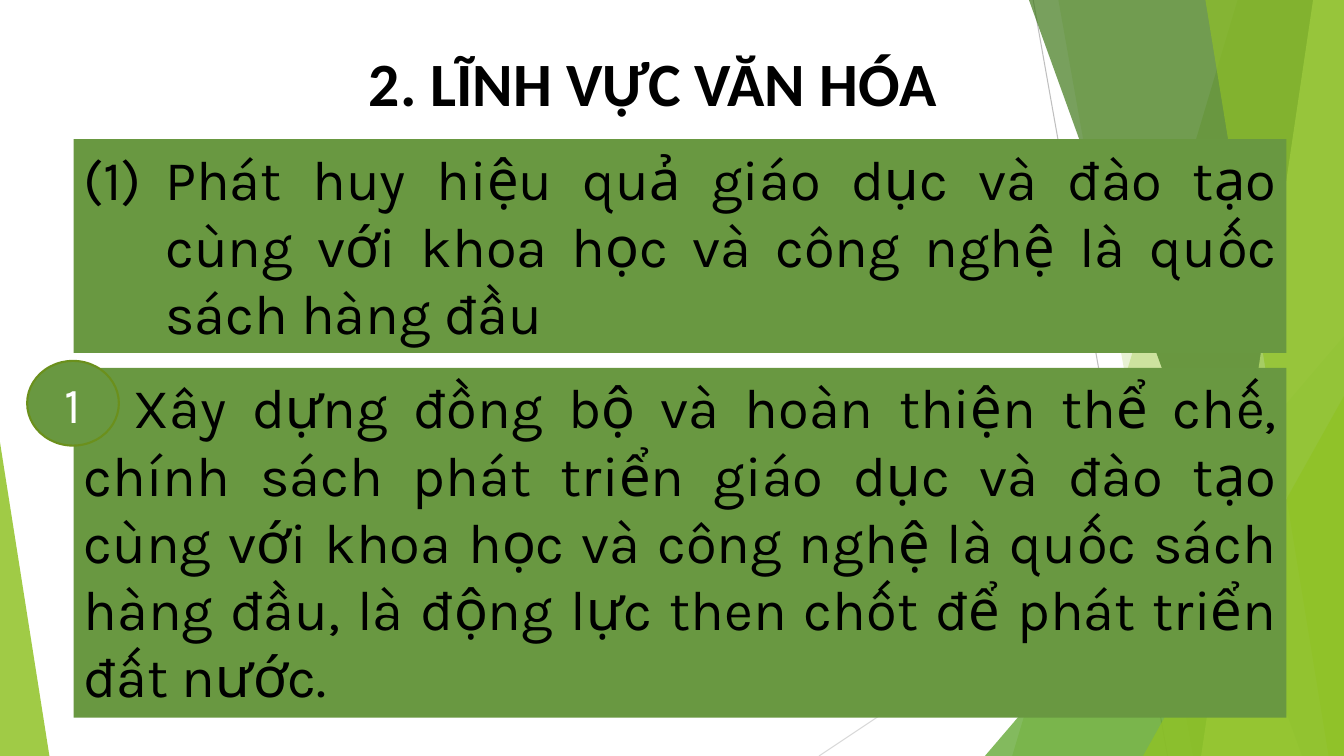
from lxml import etree
from pptx import Presentation
from pptx.dml.color import RGBColor
from pptx.enum import shapes, text
from pptx.oxml import ns
from pptx.util import Pt

WIDTH, HEIGHT = 960, 540
BLACK = RGBColor(0x00, 0x00, 0x00)
WHITE = RGBColor(0xFF, 0xFF, 0xFF)
GREY = RGBColor(0xBF, 0xBF, 0xBF)
PALE_GREY = RGBColor(0xD9, 0xD9, 0xD9)
LIME = RGBColor(0x90, 0xC2, 0x26)
LEAF = RGBColor(0x54, 0xA0, 0x21)
FOREST = RGBColor(0x3F, 0x78, 0x19)
PALE_LIME = RGBColor(0xC0, 0xE4, 0x74)
BAND_GREEN = RGBColor(0x69, 0x98, 0x41)
RING_GREEN = RGBColor(0x6B, 0x90, 0x1C)

HEADING = "2. LĨNH VỰC VĂN HÓA"
AIM = ("Phát huy hiệu quả giáo dục và đào tạo cùng với khoa học "
       "và công nghệ là quốc sách hàng đầu")
TASK = ("\tXây dựng đồng bộ và hoàn thiện thể chế, chính sách phát triển "
        "giáo dục và đào tạo cùng với khoa học và công nghệ là quốc sách "
        "hàng đầu, là động lực then chốt để phát triển đất nước.")
TASK_NUMBER = "1"

RAYS = [((738, 0), (834, HEIGHT), GREY), ((WIDTH, 290), (585, HEIGHT), PALE_GREY)]
FACETS = [
    ("wedge", (884, 723), LIME, 30),
    ("wedge", (756, 852), LIME, 20),
    ("peak", (703.5, 240, 256.5, 1), LEAF, 72),
    ("wedge", (735, 930), FOREST, 70),
    ("wedge", (938, 858), PALE_LIME, 70),
    ("wedge", (861, 949), LIME, 65),
    ("peak", (816.5, 283, 143.5, 1), LIME, 80),
    ("peak", (0, 316, 35.3, 0), LIME, 85),
]
BAND_LEFT, BAND_WIDTH = 52.6, 866.2
AIM_TOP, AIM_HEIGHT = 99.4, 152.6
TASK_TOP, TASK_HEIGHT = 262.8, 249.8
HANG, TAB = 58.3, 36


def paint(part, color, opacity=100):
    part.shadow.inherit = False
    part.fill.solid()
    part.fill.fore_color.rgb = color
    part.line.fill.background()
    if opacity < 100:
        tint = part.fill._xPr.find(".//" + ns.qn("a:srgbClr"))
        etree.SubElement(tint, ns.qn("a:alpha"), val=str(opacity * 1000))


def write(paragraph, words, size, font, color, align, bold=False):
    paragraph.alignment = align
    run = paragraph.add_run()
    run.text = words
    run.font.size = Pt(size)
    run.font.name = font
    run.font.bold = bold
    run.font.color.rgb = color


def add_ray(slide, start, end, color):
    ray = slide.shapes.add_connector(
        shapes.MSO_CONNECTOR.STRAIGHT, *map(Pt, start + end))
    ray.line.color.rgb = color
    ray.line.width = Pt(0.75)
    etree.SubElement(ray._element.spPr, ns.qn("a:effectLst"))


def add_facet(slide, kind, geometry, color, opacity):
    if kind == "wedge":
        top_x, bottom_x = geometry
        outline = slide.shapes.build_freeform(Pt(top_x), 0)
        corners = [(WIDTH, 0), (WIDTH, HEIGHT), (bottom_x, HEIGHT)]
        outline.add_line_segments([(Pt(x), Pt(y)) for x, y in corners])
        facet = outline.convert_to_shape()
    else:
        left, top, width, apex = geometry
        facet = slide.shapes.add_shape(
            shapes.MSO_SHAPE.ISOSCELES_TRIANGLE,
            Pt(left), Pt(top), Pt(width), Pt(HEIGHT - top))
        facet.adjustments[0] = apex
    paint(facet, color, opacity)


def add_band(slide, top, height):
    band = slide.shapes.add_shape(
        shapes.MSO_SHAPE.RECTANGLE,
        Pt(BAND_LEFT), Pt(top), Pt(BAND_WIDTH), Pt(height))
    paint(band, BAND_GREEN)
    frame = band.text_frame
    frame.word_wrap = True
    frame.vertical_anchor = text.MSO_ANCHOR.TOP
    frame.auto_size = text.MSO_AUTO_SIZE.SHAPE_TO_FIT_TEXT
    return frame.paragraphs[0]


def main():
    deck = Presentation()
    deck.slide_width, deck.slide_height = Pt(WIDTH), Pt(HEIGHT)
    slide = deck.slides.add_slide(deck.slide_layouts[5])

    for ray in RAYS:
        add_ray(slide, *ray)
    for facet in FACETS:
        add_facet(slide, *facet)

    heading = slide.shapes.title
    heading.left, heading.top = Pt(36), Pt(36.7)
    heading.width, heading.height = Pt(861), Pt(44)
    heading.text_frame.auto_size = text.MSO_AUTO_SIZE.NONE
    heading.text_frame.vertical_anchor = text.MSO_ANCHOR.MIDDLE
    write(heading.text_frame.paragraphs[0], HEADING, 44, "Calibri", BLACK,
          text.PP_ALIGN.CENTER, bold=True)

    aim = add_band(slide, AIM_TOP, AIM_HEIGHT)
    aim_format = aim._p.get_or_add_pPr()
    aim_format.set("marL", str(Pt(HANG)))
    aim_format.set("indent", str(-Pt(HANG)))
    etree.SubElement(aim_format, ns.qn("a:buAutoNum"), type="arabicParenBoth")
    write(aim, AIM, 40, "Karla", BLACK, text.PP_ALIGN.JUSTIFY)

    task = add_band(slide, TASK_TOP, TASK_HEIGHT)
    stops = etree.SubElement(task._p.get_or_add_pPr(), ns.qn("a:tabLst"))
    etree.SubElement(stops, ns.qn("a:tab"), pos=str(Pt(TAB)), algn="l")
    write(task, TASK, 40, "Karla", BLACK, text.PP_ALIGN.JUSTIFY)

    badge = slide.shapes.add_shape(
        shapes.MSO_SHAPE.OVAL, Pt(19.4), Pt(257.8), Pt(65.5), Pt(60.5))
    paint(badge, BAND_GREEN)
    badge.line.color.rgb = RING_GREEN
    badge.line.width = Pt(1.5)
    badge.text_frame.vertical_anchor = text.MSO_ANCHOR.MIDDLE
    write(badge.text_frame.paragraphs[0], TASK_NUMBER, 36, "Karla", WHITE,
          text.PP_ALIGN.CENTER)

    deck.save("out.pptx")


if __name__ == "__main__":
    main()
